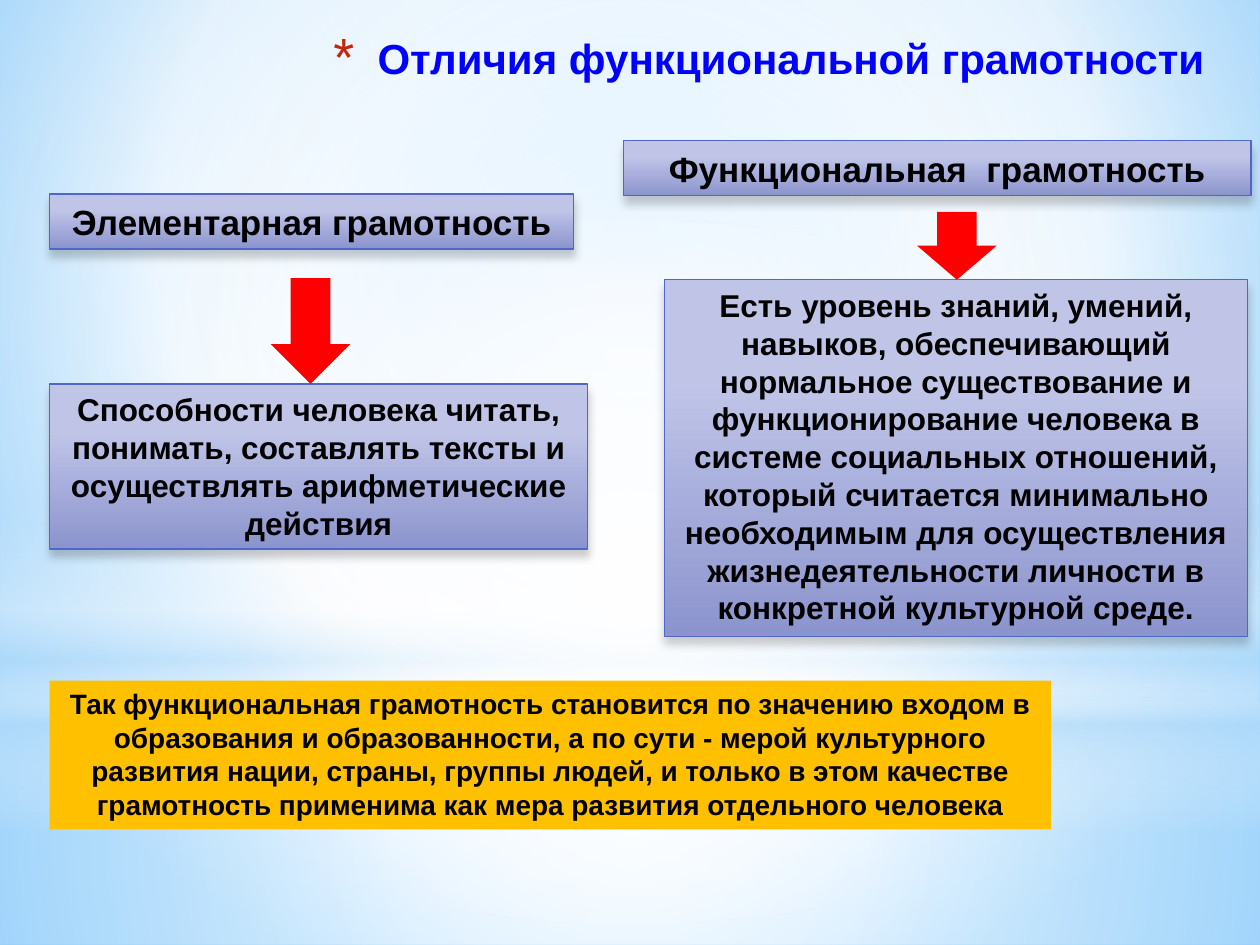
import pptx
import pptx.dml.color
import pptx.enum.shapes
import pptx.enum.text
import pptx.oxml
import pptx.oxml.ns
import pptx.util
from lxml import etree

Cm, Pt = pptx.util.Cm, pptx.util.Pt
SHAPE = pptx.enum.shapes.MSO_SHAPE
ALIGN = pptx.enum.text.PP_ALIGN
ANCHOR = pptx.enum.text.MSO_ANCHOR
AUTO = pptx.enum.text.MSO_AUTO_SIZE
qn = pptx.oxml.ns.qn
NS = pptx.oxml.ns.nsdecls("a")

COLORS = {
    "title": "0000FF", "bullet": "C3260C", "text": "000000", "arrow": "FF0000",
    "summary": "FFC000", "line": "4E67C8", "top": "C0C5E8", "bottom": "8C94CE",
    "white": "FFFFFF", "haze": "B4DCFA", "sky": "9ED5FF", "deep": "5BB9FF",
}
CENTER = (50, 50, 50, 50)
PANEL = [(28, "top", 100), (100, "bottom", 100)]
BACKDROP = [(0, "sky", 100), (60, "white", 100), (100, "deep", 100)]
LAYERS = [
    (SHAPE.RECTANGLE, (0, 14.17, 25.4, 4.88),
     [(0, "white", 91), (37, "white", 76), (100, "haze", 79)], CENTER),
    (SHAPE.RECTANGLE, (0, 0, 25.4, 14.17),
     [(0, "white", 89), (48, "white", 62), (100, "haze", 79)], CENTER),
    (SHAPE.RECTANGLE, (0, 10.46, 25.4, 6.35),
     [(0, "white", 0), (29, "white", 30), (45, "haze", 40),
      (55, "white", 26), (65, "haze", 60), (100, "white", 0)], None),
    (SHAPE.OVAL, (0, 4.45, 25.4, 14.17),
     [(0, "white", 100), (56, "white", 0)], CENTER),
]


def rgb(name):
    """Return the named colour."""
    return pptx.dml.color.RGBColor.from_string(COLORS[name])


def set_attrs(obj, values):
    """Set each attribute of obj from a dict."""
    for key, value in values.items():
        setattr(obj, key, value)


def set_gradient(fill, parent, stops, focus=None):
    """Give parent a radial gradient around focus, or a vertical one."""
    fill.solid()
    gs = "".join(
        f'<a:gs pos="{pos * 1000}"><a:srgbClr val="{COLORS[name]}">'
        f'<a:alpha val="{alpha * 1000}"/></a:srgbClr></a:gs>'
        for pos, name, alpha in stops)
    if focus:
        sides = " ".join(f'{k}="{v * 1000}"' for k, v in zip("ltrb", focus))
        way = f'<a:path path="circle"><a:fillToRect {sides}/></a:path>'
    else:
        way = '<a:lin ang="5400000" scaled="0"/>'
    grad = pptx.oxml.parse_xml(
        f'<a:gradFill {NS} rotWithShape="1"><a:gsLst>{gs}</a:gsLst>{way}</a:gradFill>')
    parent.replace(parent.find(qn("a:solidFill")), grad)


def add_shape(s, kind, box, color=None):
    """Add a flat shape without outline."""
    sp = s.shapes.add_shape(kind, *map(Cm, box))
    sp.shadow.inherit = False
    sp.line.fill.background()
    if color:
        sp.fill.solid()
        sp.fill.fore_color.rgb = rgb(color)
    return sp


def add_text(sp, text, size, color="text", align=ALIGN.CENTER, **frame):
    """Write one bold paragraph into a shape."""
    tf = sp.text_frame
    set_attrs(tf, {"word_wrap": True, "vertical_anchor": ANCHOR.TOP, **frame})
    p = tf.paragraphs[0]
    p.alignment = align
    r = p.add_run()
    r.text = text
    set_attrs(r.font, {"name": "Arial", "size": Pt(size), "bold": True})
    r.font.color.rgb = rgb(color)
    return p


def add_panel(s, box, text, size):
    """Add a shaded, outlined panel with a soft shadow."""
    sp = add_shape(s, SHAPE.RECTANGLE, box)
    spPr = sp._element.spPr
    set_gradient(sp.fill, spPr, PANEL)
    sp.line.color.rgb = rgb("line")
    sp.line.width = Pt(0.75)
    spPr.find(qn("a:effectLst")).append(pptx.oxml.parse_xml(
        f'<a:outerShdw {NS} blurRad="{Pt(5)}" dist="{Pt(4)}" dir="5400000" rotWithShape="0">'
        f'<a:srgbClr val="{COLORS["text"]}"><a:alpha val="20000"/></a:srgbClr></a:outerShdw>'))
    add_text(sp, text, size, auto_size=AUTO.SHAPE_TO_FIT_TEXT)


def add_backdrop(s):
    """Paint the background and its translucent layers."""
    fill = s.background.fill
    fill.solid()
    bgPr = next(s._element.iter(qn("p:bgPr")))
    set_gradient(fill, bgPr, BACKDROP, (20, 10, 20, 60))
    for kind, box, stops, focus in LAYERS:
        sp = add_shape(s, kind, box)
        set_gradient(sp.fill, sp._element.spPr, stops, focus)


def add_title(s, box, text):
    """Add the right-aligned title with its star bullet."""
    sp = s.shapes.add_textbox(*map(Cm, box))
    p = add_text(sp, text, 24, "title", ALIGN.RIGHT)
    pPr = p._p.get_or_add_pPr()
    pPr.set("marL", str(Cm(0.89)))
    pPr.set("indent", str(-Cm(0.89)))
    clr = etree.SubElement(pPr, qn("a:buClr"))
    etree.SubElement(clr, qn("a:srgbClr"), val=COLORS["bullet"])
    etree.SubElement(pPr, qn("a:buSzPct"), val="128000")
    etree.SubElement(pPr, qn("a:buFont"), typeface="Arial")
    etree.SubElement(pPr, qn("a:buChar"), char="*")


def add_column(s, box, head, head_w, body, body_box, arrow):
    """Add a heading, an arrow and the definition it leads to."""
    x, y = box
    dx, dy, w, h = body_box
    center, length = arrow
    add_panel(s, (x + dx, y + dy, w, h), body, 18)
    add_panel(s, (x, y, head_w, 1.11), head, 20)
    add_shape(s, SHAPE.DOWN_ARROW, (x + center - 0.8, y + dy - length, 1.6, length), "arrow")


def add_summary(s, box, text):
    """Add the conclusion block."""
    sp = add_shape(s, SHAPE.RECTANGLE, box, "summary")
    add_text(sp, text, 16, auto_size=AUTO.SHAPE_TO_FIT_TEXT)


def main():
    """Build and save the slide."""
    prs = pptx.Presentation()
    set_attrs(prs, {"slide_width": Cm(25.4), "slide_height": Cm(19.05)})
    s = prs.slides.add_slide(prs.slide_layouts[6])
    add_backdrop(s)
    add_title(s, (0.3, 0.53, 24.23, 1.98), "Отличия функциональной грамотности")
    add_summary(s, (1, 13.72, 20.19, 3),
                "Так функциональная грамотность становится по значению входом в образования "
                "и образованности, а по сути - мерой культурного развития нации, страны, "
                "группы людей, и только в этом качестве грамотность применима как мера "
                "развития отдельного человека")
    add_column(s, (1, 3.91), "Элементарная грамотность", 10.57,
               "Способности человека читать, понимать, составлять тексты и осуществлять "
               "арифметические действия", (0, 3.83, 10.85, 3.33), (5.26, 2.13))
    add_column(s, (12.57, 2.84), "Функциональная  грамотность", 12.65,
               "Есть уровень знаний, умений, навыков, обеспечивающий нормальное "
               "существование и функционирование человека в системе социальных отношений, "
               "который считается минимально необходимым для осуществления "
               "жизнедеятельности личности в конкретной культурной среде.",
               (0.82, 2.8, 11.76, 7.19), (6.72, 1.37))
    prs.save("out.pptx")


if __name__ == "__main__":
    main()
